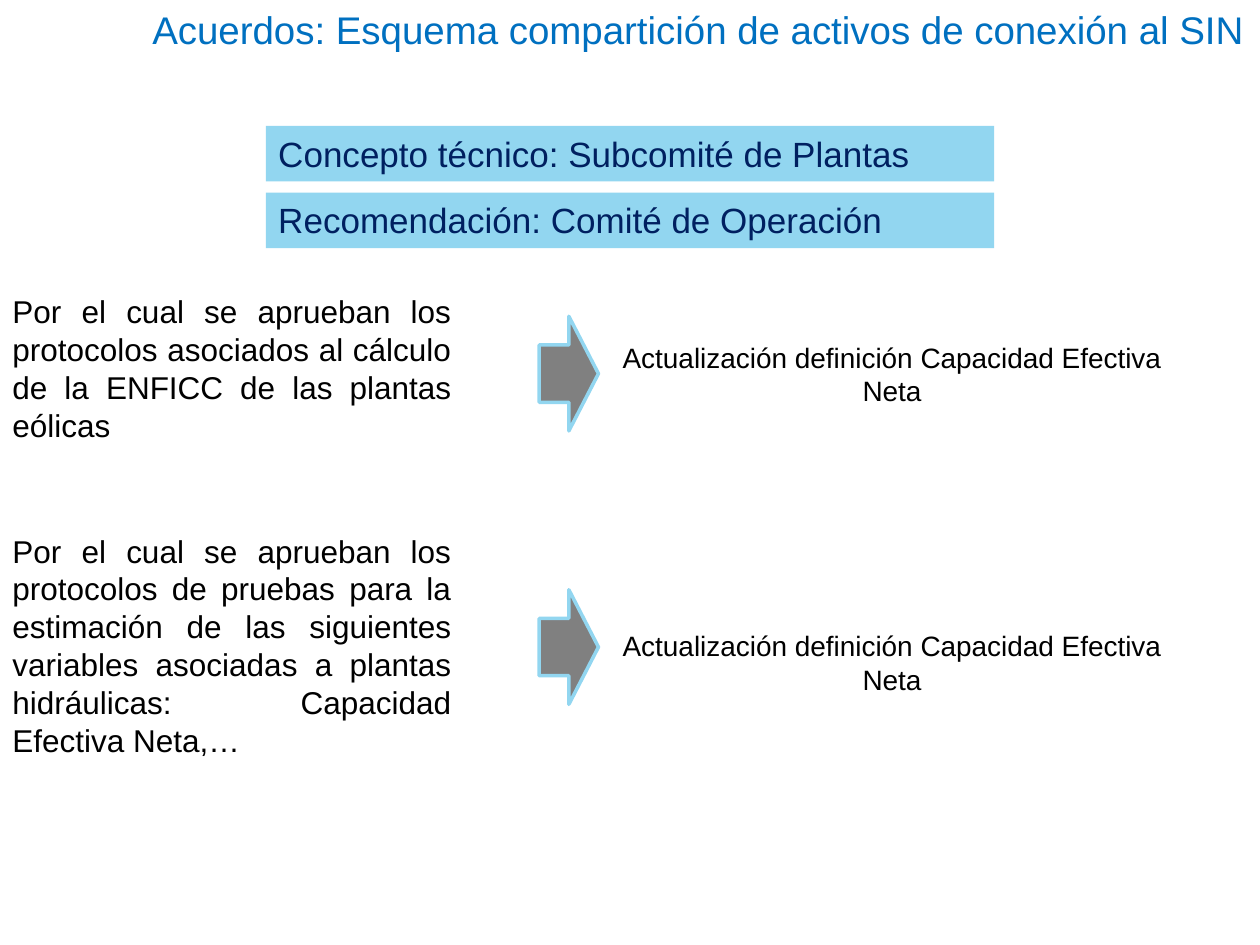
from pptx import Presentation
from pptx.dml.color import RGBColor
from pptx.enum.shapes import MSO_SHAPE as Shape
from pptx.enum.text import MSO_ANCHOR as Anchor, MSO_AUTO_SIZE as AutoSize, PP_ALIGN as Align
from pptx.util import Inches, Pt

COLORS = {"title": "0070C0", "band": "92D6F0", "band_text": "002060",
          "text": "000000", "arrow": "808080"}

TITLE = "Acuerdos: Esquema compartición de activos de conexión al SIN"
BANDS = ["Concepto técnico: Subcomité de Plantas",
         "Recomendación: Comité de Operación"]
UPDATE = "Actualización definición Capacidad Efectiva Neta"
# agreement text, its top and height, arrow top, top of the resulting update
AGREEMENTS = [
    ("Por el cual se aprueban los protocolos asociados al cálculo de la ENFICC "
     "de las plantas eólicas", 2.27, 1.31, 2.73, 2.65),
    ("Por el cual se aprueban los protocolos de pruebas para la estimación de las "
     "siguientes variables asociadas a plantas hidráulicas: Capacidad Efectiva Neta,…",
     4.17, 1.92, 4.9, 4.94),
]


def color(name):
    return RGBColor.from_string(COLORS[name])


def write(shape, text, size, color_name, align):
    frame = shape.text_frame
    frame.word_wrap = True
    frame.auto_size = AutoSize.SHAPE_TO_FIT_TEXT
    frame.vertical_anchor = Anchor.TOP
    paragraph = frame.paragraphs[0]
    paragraph.text = text
    paragraph.alignment = align
    paragraph.font.name = "Arial"
    paragraph.font.size = Pt(size)
    paragraph.font.color.rgb = color(color_name)


def add_text(slide, box, text, size, color_name, align):
    shape = slide.shapes.add_textbox(*map(Inches, box))
    write(shape, text, size, color_name, align)


def add_filled(slide, kind, box, fill):
    shape = slide.shapes.add_shape(kind, *map(Inches, box))
    shape.shadow.inherit = False
    shape.fill.solid()
    shape.fill.fore_color.rgb = color(fill)
    return shape


def main():
    presentation = Presentation()
    presentation.slide_width, presentation.slide_height = Inches(10), Inches(7.5)
    slide = presentation.slides.add_slide(presentation.slide_layouts[6])

    # Heading bands
    for index, text in enumerate(BANDS):
        band = add_filled(slide, Shape.RECTANGLE, (2.11, 1 + 0.53 * index, 5.78, 0.44), "band")
        band.line.fill.background()
        write(band, text, 20, "band_text", Align.JUSTIFY)

    # Each agreement points to its update
    for text, top, height, arrow_top, update_top in AGREEMENTS:
        add_text(slide, (0, top, 3.68, height), text, 18, "text", Align.JUSTIFY)
        arrow = add_filled(slide, Shape.DOWN_ARROW, (4.06, arrow_top, 0.91, 0.47), "arrow")
        arrow.rotation = 270
        arrow.line.color.rgb = color("band")
        arrow.line.width = Pt(2)
        add_text(slide, (4.75, update_top, 4.66, 0.64), UPDATE, 16, "text", Align.CENTER)

    # Title
    add_text(slide, (0.94, 0, 9.03, 0.47), TITLE, 22, "title", Align.RIGHT)

    presentation.save("out.pptx")


if __name__ == "__main__":
    main()
